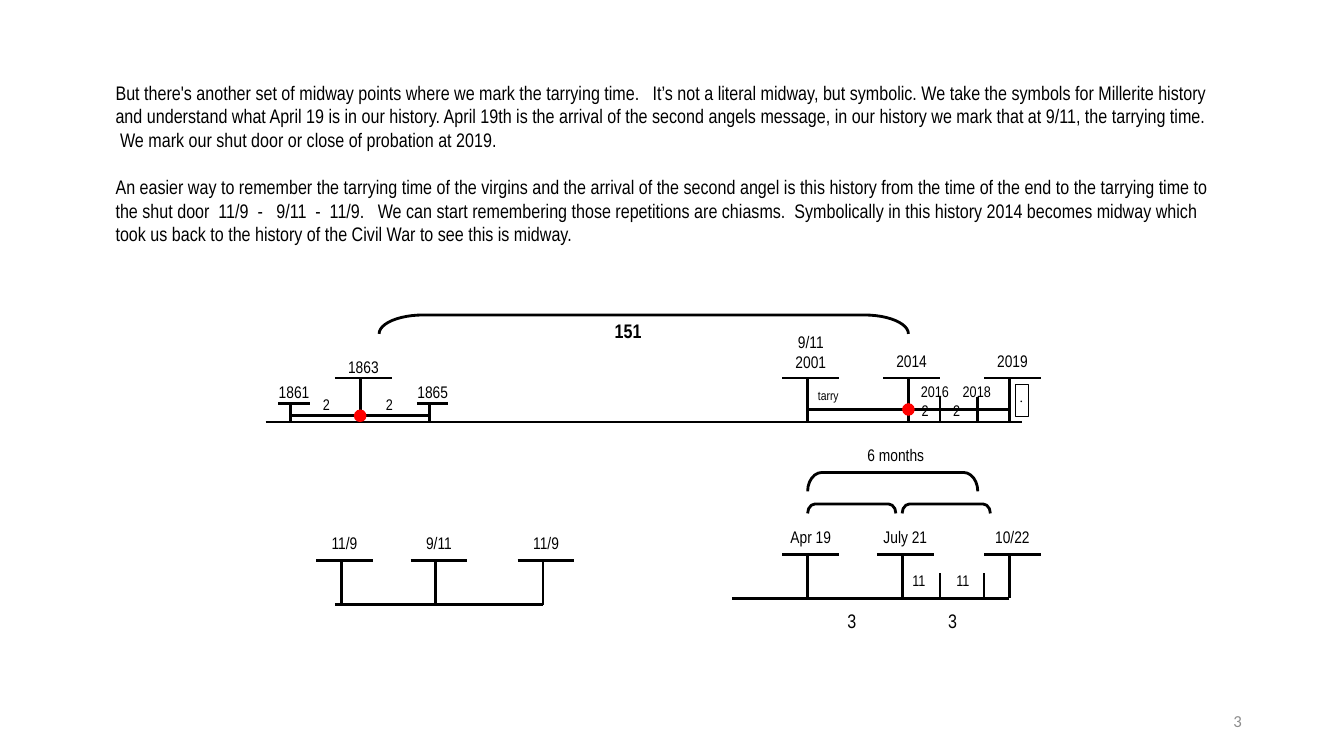
from dataclasses import dataclass
from lxml import etree
from pptx import Presentation
from pptx.dml.color import RGBColor
from pptx.enum.shapes import MSO_CONNECTOR, MSO_SHAPE
from pptx.enum.text import MSO_ANCHOR, PP_ALIGN
from pptx.oxml.ns import qn
from pptx.util import Inches, Pt

STRAIGHT = MSO_CONNECTOR.STRAIGHT
BRACKET, OVAL = MSO_SHAPE.LEFT_BRACKET, MSO_SHAPE.OVAL
MIDDLE = MSO_ANCHOR.MIDDLE
LEFT, CENTER, RIGHT = PP_ALIGN.LEFT, PP_ALIGN.CENTER, PP_ALIGN.RIGHT


@dataclass(frozen=True)
class Theme:
    ink: RGBColor = RGBColor(0, 0, 0)
    red: RGBColor = RGBColor(255, 0, 0)
    gray: RGBColor = RGBColor(0x8C, 0x8C, 0x8C)
    face: str = "Arial Narrow"
    page_face: str = "Calibri"
    box_face: str = "Times New Roman"
    body: int = 14
    label: int = 12
    count: int = 11
    small: int = 10
    tiny: int = 9
    stroke: float = 2
    thin: float = 0.25


theme = Theme()
deck = Presentation()
deck.slide_width, deck.slide_height = Inches(13.33), Inches(7.5)
slide = deck.slides.add_slide(deck.slide_layouts[6])
shapes = slide.shapes
UNIT = Inches(1) // 16
EDGE = Inches(0.01)


def add_line(x1, y1, x2, y2):
    line = shapes.add_connector(
        STRAIGHT, EDGE + x1 * UNIT, y1 * UNIT, EDGE + x2 * UNIT, y2 * UNIT)
    line.line.color.rgb = theme.ink
    line.line.width = Pt(theme.stroke)
    etree.SubElement(line._element.spPr, qn("a:effectLst"))


def add_text(text, col, row, wide, high, size, align=CENTER, face=theme.face,
             color=theme.ink, inset=0.04):
    box = shapes.add_textbox(
        EDGE + int(col * UNIT), int(row * UNIT), int(wide * UNIT), int(high * UNIT))
    frame = box.text_frame
    frame.word_wrap = True
    frame.margin_left = frame.margin_right = Inches(inset)
    frame.margin_top = frame.margin_bottom = Inches(0.04)
    frame.text = text
    for para in frame.paragraphs:
        para.alignment = align
        para.font.name = face
        para.font.size = Pt(size)
        para.font.color.rgb = color
    return box


page = add_text("3", 150.5, 111.2, 48, 6.4, theme.label, RIGHT,
                theme.page_face, theme.gray, 0.1)
page.text_frame.vertical_anchor = MIDDLE

story = (
    "But there's another set of midway points where we mark the tarrying time.   "
    "It’s not a literal midway, but symbolic. We take the symbols for Millerite history "
    "and understand what April 19 is in our history. April 19th is the arrival of the "
    "second angels message, in our history we mark that at 9/11, the tarrying time.  "
    "We mark our shut door or close of probation at 2019.\n"
    "An easier way to remember the tarrying time of the virgins and the arrival of the "
    "second angel is this history from the time of the end to the tarrying time to the "
    "shut door  11/9  -   9/11  -  11/9.   We can start remembering those repetitions are "
    "chiasms.  Symbolically in this history 2014 becomes midway which took us back to "
    "the history of the Civil War to see this is midway."
)
body = add_text(story, 16.6, 12, 177, 32, theme.body, LEFT, inset=0.1)
body.text_frame.margin_top = Inches(0.05)
body.text_frame.paragraphs[1].space_before = Pt(17)

for start, end, row in [
    (42, 162, 67), (128, 160, 65), (46, 68, 66), (116, 160, 95), (53, 86, 96),
]:
    add_line(start, row, end, row)

for col, top, base in [(149, 63, 67), (155, 63, 67), (149, 91, 95), (156, 91, 95)]:
    add_line(col, top, col, base)

for text, stem, top, base, high, reach in [
    ("1861", 46, 64, 67, 4, 2),
    ("1863", 57, 60, 67, 4, 4),
    ("1865", 68, 64, 67, 4, 2),
    ("9/11\n2001", 128, 60, 67, 8, 4),
    ("2014", 144, 60, 67, 5, 4),
    ("2019", 160, 60, 67, 5, 4),
    ("Apr 19", 128, 88, 95, 5, 4),
    ("July 21", 143, 88, 95, 5, 4),
    ("10/22", 160, 88, 95, 5, 4),
    ("11/9", 54, 89, 96, 5, 4),
    ("9/11", 69, 89, 96, 5, 4),
    ("11/9", 86, 89, 96, 5, 4),
]:
    add_line(stem, top, stem, base)
    add_line(stem - reach, top, stem + reach + 1, top)
    add_text(text, stem - 4, top - high, 9, high, theme.label)

for start, end, row, high, curve in [
    (60, 144, 50, 3, 2.33), (128, 155, 75, 3, 0.75),
    (128, 142, 80, 1.5, 0.78), (143, 157, 80, 1.5, 0.78),
]:
    span = end - start
    left = (start + end - high) / 2
    top = row + (high - span) / 2
    brace = shapes.add_shape(
        BRACKET, EDGE + int(left * UNIT), int(top * UNIT), int(high * UNIT), span * UNIT)
    brace.rotation = 90
    brace.adjustments[0] = curve
    brace.shadow.inherit = False
    brace.fill.background()
    brace.line.color.rgb = theme.ink
    brace.line.width = Pt(theme.stroke)

for text, col, row, wide, high, size in [
    ("6 months", 133, 70, 18, 5, theme.label),
    ("3", 132, 96, 6, 5, theme.body),
    ("3", 148, 96, 6, 5, theme.body),
    ("11", 143, 90, 5.3, 4, theme.count),
    ("11", 150, 90, 5.3, 4, theme.count),
    ("2", 49, 62, 5.3, 4, theme.count),
    ("2", 59, 62, 5.3, 4, theme.count),
    ("2", 144, 63, 5.3, 4, theme.count),
    ("2", 149, 63, 5.3, 4, theme.count),
    ("2016", 145, 60, 6.4, 4, theme.count),
    ("2018", 151, 60, 7.7, 3.5, theme.count),
]:
    add_text(text, col, row, wide, high, size)

add_text("tarry", 129, 61, 9, 5, theme.tiny, LEFT)
years = add_text("151", 95, 50, 9, 6, theme.body)
years.text_frame.paragraphs[0].font.bold = True
door = add_text(".", 161, 61, 2, 5, theme.small, LEFT, theme.box_face)
door.line.color.rgb = theme.ink
door.line.width = Pt(theme.thin)

for col, row in [(56, 65), (143, 64)]:
    dot = shapes.add_shape(OVAL, EDGE + col * UNIT, row * UNIT, 2 * UNIT, 2 * UNIT)
    dot.shadow.inherit = False
    dot.fill.solid()
    dot.fill.fore_color.rgb = theme.red
    dot.line.fill.background()

deck.save("out.pptx")
